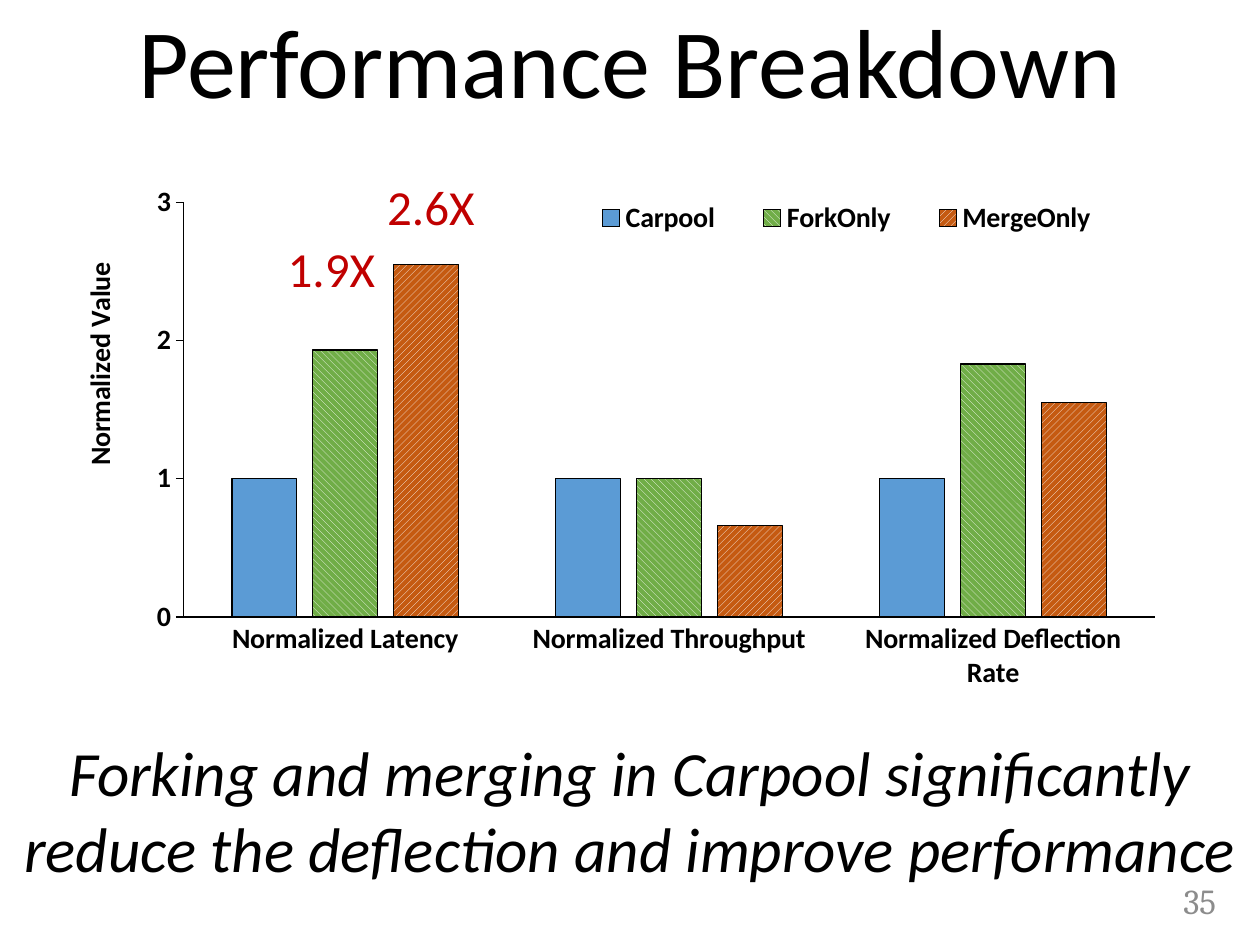
from dataclasses import dataclass

from pptx import Presentation
from pptx.chart.data import CategoryChartData
from pptx.dml.color import RGBColor
from pptx.enum.chart import XL_CHART_TYPE, XL_LEGEND_POSITION, XL_TICK_MARK
from pptx.enum.dml import MSO_PATTERN
from pptx.enum.text import MSO_ANCHOR, PP_ALIGN
from pptx.oxml import parse_xml
from pptx.oxml.ns import nsdecls, qn
from pptx.util import Inches, Pt

CLUSTERED = XL_CHART_TYPE.COLUMN_CLUSTERED
LEGEND_BOTTOM = XL_LEGEND_POSITION.BOTTOM
TICK_NONE, TICK_OUT = XL_TICK_MARK.NONE, XL_TICK_MARK.OUTSIDE
DOWN_STRIPES = MSO_PATTERN.WIDE_DOWNWARD_DIAGONAL
UP_STRIPES = MSO_PATTERN.WIDE_UPWARD_DIAGONAL
TOP, MIDDLE, BOTTOM = MSO_ANCHOR.TOP, MSO_ANCHOR.MIDDLE, MSO_ANCHOR.BOTTOM
CENTER, RIGHT = PP_ALIGN.CENTER, PP_ALIGN.RIGHT


@dataclass(frozen=True)
class Theme:
    font: str = "Calibri"
    number_font: str = "Cambria"
    ink: str = "000000"
    paper: str = "FFFFFF"
    muted: str = "8C8C8C"
    accent: str = "C00000"
    blue: str = "5B9BD5"
    green: str = "70AD47"
    orange: str = "C55A11"
    title_size: int = 56
    caption_size: int = 36
    callout_size: int = 28
    number_size: int = 20
    chart_size: int = 16
    line_width: float = 0.75


THEME = Theme()

CATEGORIES = ["Normalized Latency", "Normalized Throughput", "Normalized Deflection Rate"]
# name, values, colour, pattern
SERIES = [
    ("Carpool", (1, 1, 1), THEME.blue, None),
    ("ForkOnly", (1.93, 1, 1.83), THEME.green, DOWN_STRIPES),
    ("MergeOnly", (2.55, 0.66, 1.55), THEME.orange, UP_STRIPES),
]
# text, left, top
CALLOUTS = [("1.9X", 2.17, 1.84), ("2.6X", 2.96, 1.35)]


def rgb(color):
    return RGBColor.from_string(color)


def style_font(font, size, color=THEME.ink, name=THEME.font, bold=False, italic=False):
    font.name = name
    font.size = Pt(size)
    font.bold = bold
    font.italic = italic
    font.color.rgb = rgb(color)


def style_line(line):
    line.color.rgb = rgb(THEME.ink)
    line.width = Pt(THEME.line_width)


def add_text(page, text, left, top, width, height, size,
             align=CENTER, anchor=MIDDLE, spacing=None, **font_style):
    box = page.shapes.add_textbox(Inches(left), Inches(top), Inches(width), Inches(height))
    frame = box.text_frame
    frame.word_wrap = True
    frame.vertical_anchor = anchor
    para = frame.paragraphs[0]
    para.text = text
    para.alignment = align
    para.line_spacing = spacing
    style_font(para.font, size, **font_style)


def place(element, index, x, y, width=None, height=None, inner=False):
    """Give a chart part a manual layout, in fractions of the chart, as child number index."""
    old = element.find(qn("c:layout"))
    if old is not None:
        element.remove(old)
    settings = [("layoutTarget", "inner")] if inner else []
    settings += [("xMode", "edge"), ("yMode", "edge"), ("x", x), ("y", y)]
    if width is not None:
        settings += [("w", width), ("h", height)]
    tags = "".join(f'<c:{tag} val="{value}"/>' for tag, value in settings)
    element.insert(index, parse_xml(
        f'<c:layout {nsdecls("c")}><c:manualLayout>{tags}</c:manualLayout></c:layout>'))


def style_series(series, color, pattern):
    fill = series.format.fill
    if pattern is None:
        fill.solid()
        fill.fore_color.rgb = rgb(color)
    else:
        fill.patterned()
        fill.pattern = pattern
        fill.fore_color.rgb = rgb(THEME.paper)
        fill.back_color.rgb = rgb(color)
    series.invert_if_negative = False
    style_line(series.format.line)


def style_axis(axis, tick):
    axis.has_major_gridlines = False
    axis.major_tick_mark = tick
    axis.minor_tick_mark = TICK_NONE
    style_font(axis.tick_labels.font, THEME.chart_size, bold=True)
    style_line(axis.format.line)


def style_value_axis(axis):
    style_axis(axis, TICK_OUT)
    axis.minimum_scale, axis.maximum_scale, axis.major_unit = 0, 3, 1
    axis.tick_labels.number_format = "0"
    axis.tick_labels.number_format_is_linked = False
    title = axis.axis_title
    para = title.text_frame.paragraphs[0]
    para.text = "Normalized Value"
    style_font(para.font, THEME.chart_size, bold=True)
    place(title._element, 1, 0.03, 0.15)


def style_legend(chart):
    chart.has_legend = True
    legend = chart.legend
    legend.position = LEGEND_BOTTOM
    legend.include_in_layout = False
    style_font(legend.font, THEME.chart_size, bold=True)
    place(legend._element, 1, 0.46, 0.04, 0.5, 0.09)


def add_breakdown_chart(page):
    data = CategoryChartData()
    data.categories = CATEGORIES
    for name, values, _, _ in SERIES:
        data.add_series(name, values)
    chart = page.shapes.add_chart(
        CLUSTERED, Inches(0.33), Inches(1.33), Inches(9), Inches(4.75), data).chart
    style_font(chart.font, THEME.chart_size, bold=True)
    chart.has_title = False

    plot = chart.plots[0]
    plot.vary_by_categories = False
    plot.gap_width = 150
    plot.overlap = -25
    for series, (_, _, color, pattern) in zip(plot.series, SERIES):
        style_series(series, color, pattern)

    style_axis(chart.category_axis, TICK_NONE)
    style_value_axis(chart.value_axis)
    style_legend(chart)
    plot_area = chart._chartSpace.chart.plotArea
    place(plot_area, 0, 0.125, 0.058, 0.857, 0.693, inner=True)


def main():
    deck = Presentation()
    deck.slide_width, deck.slide_height = Inches(10), Inches(7.5)
    page = deck.slides.add_slide(deck.slide_layouts[6])

    add_text(page, "35", 9, 6.95, 0.75, 0.4, THEME.number_size,
             align=RIGHT, color=THEME.muted, name=THEME.number_font)
    add_text(page, "Performance Breakdown", 0, 0.17, 10, 0.83, THEME.title_size,
             anchor=BOTTOM, spacing=0.9)
    add_breakdown_chart(page)
    for text, left, top in CALLOUTS:
        add_text(page, text, left, top, 0.92, 0.57, THEME.callout_size,
                 anchor=TOP, color=THEME.accent)
    add_text(page, "Forking and merging in Carpool significantly reduce the deflection "
             "and improve performance", 0, 5.84, 10, 1.17, THEME.caption_size, italic=True)

    deck.save("out.pptx")


if __name__ == "__main__":
    main()
